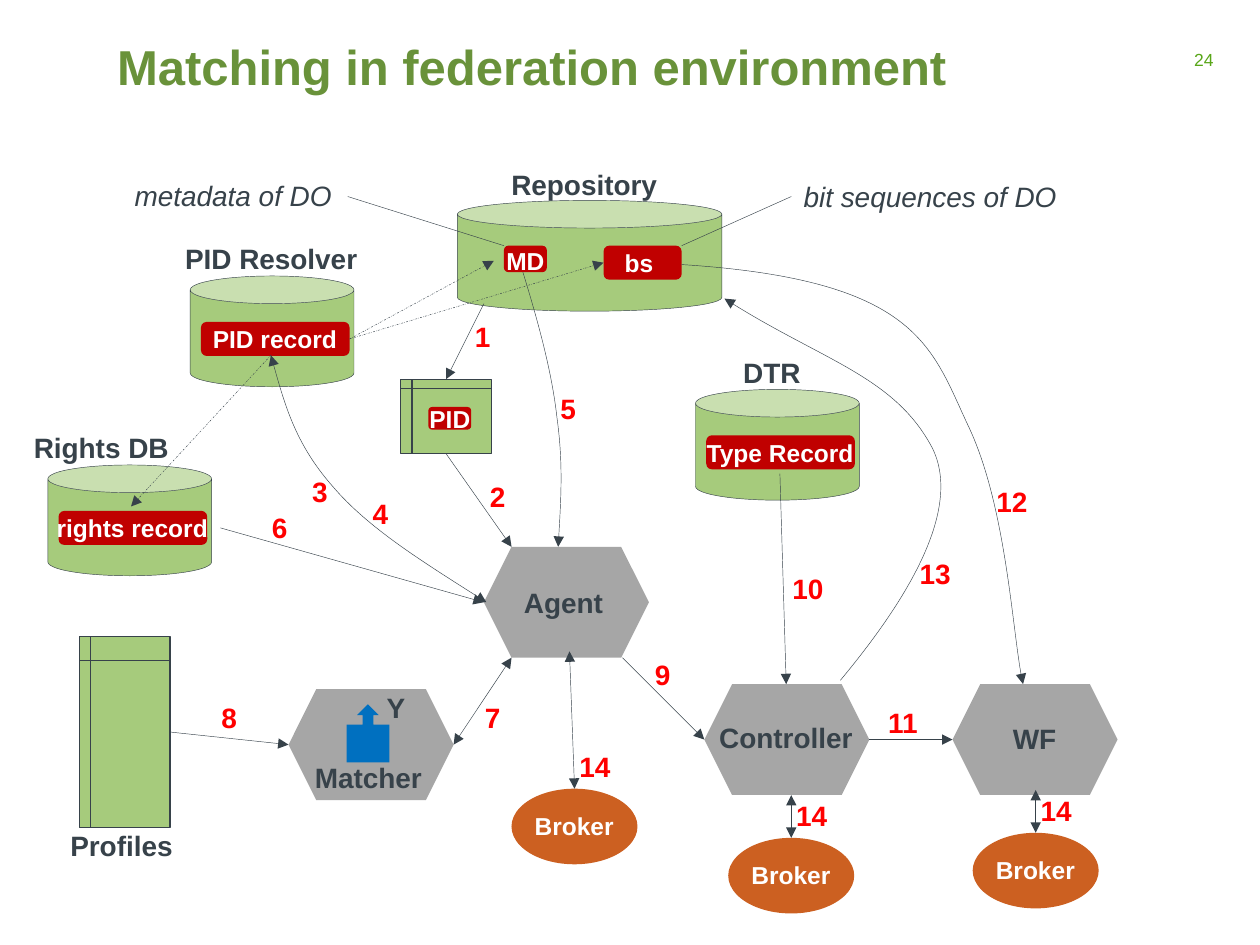
"""Build the slide on matching in a federation environment."""
import lxml.etree
import pptx
import pptx.dml.color
import pptx.enum.dml
import pptx.enum.shapes
import pptx.enum.text
import pptx.oxml.ns
import pptx.util

SHAPE = pptx.enum.shapes.MSO_SHAPE
ALIGN = pptx.enum.text.PP_ALIGN
COLORS = {"title": "69923A", "number": "58A618", "green": "A6CB7C", "dark": "37424A",
          "gray": "A6A6A6", "red": "C00000", "step": "FF0000", "blue": "0070C0",
          "orange": "CC6021", "white": "FFFFFF"}
GRID = 1000
CAN, PILL, HEXAGON, BROKER = (130, 88), (118, 27), (131, 88), (100, 60)

TITLE = "Matching in federation environment"
STORES = [("PID Resolver", 151, 219, 137, 159, "PID record", 119),
          ("DTR", 552, 309, 580, 66, "Type Record", 137),
          ("Rights DB", 38, 369, 17, 129, "rights record", 141)]
AGENTS = [("Agent", 384, 434, 406, 460, 84), ("Matcher", 229, 547, 240, 599, 106),
          ("Controller", 559, 543, 561, 567, 127), ("WF", 756, 543, 794, 568, 55)]
BROKERS = [(578, 665, (628, 631)), (406, 626, (452, 517)), (772, 661, (822, 627))]
SHEETS = [("PID sheet", 318, 301, 72, 59), ("Profiles", 63, 505, 72, 152)]
PILLS = [("MD", 400, 195, 34, 21), ("bs", 479, 195, 62, 27), ("PID", 340, 323, 34, 18)]
PILL_TEXTS = [("MD", 392, 190, 51), ("bs", 486, 192, 43), ("PID", 331, 316, 53)]
NAMES = [("Repository", 396, 128, 137), ("Profiles", 46, 653, 103), ("Y", 297, 543, 35)]
NOTES = [("bit sequences of DO", 628, 138, 224), ("metadata of DO", 97, 137, 179)]
STEPS = [("1", 367, 249), ("2", 379, 376), ("3", 238, 372), ("4", 286, 389), ("5", 435, 306),
         ("6", 206, 400), ("7", 375, 551), ("8", 166, 551), ("9", 510, 517), ("10", 619, 449),
         ("11", 695, 555), ("12", 781, 380), ("13", 720, 437)]
LINES = [((628, 156), (541, 195), ""), ((276, 156), (400, 195), "")]
ARROWS = [(("PID sheet", 2), (406, 434), "tail"), ((384, 241), ("PID sheet", 0), "tail"),
          (("Profiles", 3), (229, 591), "tail"), ((494, 522), (559, 587), "tail"),
          ((690, 587), (756, 587), "tail"), ((619, 376), (624, 543), "tail"),
          ((175, 419), (384, 478), "tail"), ((406, 522), (360, 591), "head tail")]
DASHED = [(("PID record", 3), (392, 207), "tail"), (("PID record", 3), ("bs", 1), "tail"),
          ((215, 282), (104, 402), "tail")]
CURVES = [([(415, 216), (427, 255), (438, 295), (442, 331),
            (447, 367), (445, 400), (443, 434)], "tail"),
          ([(215, 282), (225, 318), (235, 353), (264, 386),
            (292, 419), (339, 448), (386, 478)], "head tail"),
          ([(541, 210), (728, 222), (739, 275), (768, 337),
            (798, 399), (804, 509), (812, 543)], "tail"),
          ([(667, 540), (711, 487), (769, 405), (738, 352),
            (708, 299), (650, 285), (575, 237)], "tail")]

prs = pptx.Presentation()
prs.slide_width, prs.slide_height = pptx.util.Inches(10), pptx.util.Inches(7.5)
CELL = prs.slide_width // GRID
s = prs.slides.add_slide(prs.slide_layouts[5])
nodes = {}


def rgb(name):
    return pptx.dml.color.RGBColor.from_string(COLORS[name])


def grid(*values):
    return [pptx.util.Emu(round(v * CELL)) for v in values]


def style(p, size, color, bold=True, italic=False, align=ALIGN.LEFT):
    p.alignment = align
    f = p.font
    f.name, f.size, f.bold, f.italic = "Arial", pptx.util.Pt(size), bold, italic
    f.color.rgb = rgb(color)


def block(kind, x, y, w, h, fill, line=0):
    sp = s.shapes.add_shape(kind, *grid(x, y, w, h))
    sp.shadow.inherit = False
    sp.fill.solid()
    sp.fill.fore_color.rgb = rgb(fill)
    if line:
        sp.line.color.rgb, sp.line.width = rgb("dark"), pptx.util.Pt(line)
    else:
        sp.line.fill.background()
    return sp


def label(text, x, y, w, size=16, color="dark", **kw):
    tf = s.shapes.add_textbox(*grid(x, y, w, 37 if size == 16 else 34)).text_frame
    tf.word_wrap = False
    tf.auto_size = pptx.enum.text.MSO_AUTO_SIZE.SHAPE_TO_FIT_TEXT
    tf.text = text
    style(tf.paragraphs[0], size, color, **kw)


def stroke(sp, ends, dash=False):
    sp.line.color.rgb, sp.line.width = rgb("dark"), pptx.util.Pt(0.25)
    if dash:
        sp.line.dash_style = pptx.enum.dml.MSO_LINE.DASH_DOT
    ln = sp._element.spPr.find(pptx.oxml.ns.qn("a:ln"))
    for end in ends.split():
        lxml.etree.SubElement(ln, pptx.oxml.ns.qn(f"a:{end}End"), type="triangle")


def connect(start, end, ends, dash=False):
    points = [(0, 0) if isinstance(p[0], str) else p for p in (start, end)]
    c = s.shapes.add_connector(pptx.enum.shapes.MSO_CONNECTOR.STRAIGHT,
                               *grid(*points[0], *points[1]))
    for p, join in ((start, c.begin_connect), (end, c.end_connect)):
        if isinstance(p[0], str):
            join(nodes[p[0]], p[1])
    stroke(c, ends, dash)
    lxml.etree.SubElement(c._element.spPr, pptx.oxml.ns.qn("a:effectLst"))


def curve(points, ends):
    fb = s.shapes.build_freeform(*points[0], scale=CELL)
    fb.add_line_segments(points[1:], close=False)
    sp = fb.convert_to_shape()
    sp.shadow.inherit = False
    sp.fill.background()
    stroke(sp, ends)
    outline = sp._element.xpath(".//a:path")[0]
    for i, segment in enumerate(outline.findall(pptx.oxml.ns.qn("a:lnTo"))):
        if i % 3 == 0:
            bezier = lxml.etree.SubElement(outline, pptx.oxml.ns.qn("a:cubicBezTo"))
        bezier.append(segment[0])
        outline.remove(segment)


title = s.shapes.title
title.left, title.top, title.width, title.height = grid(83, 24, 827, 107)
title.text_frame.text = TITLE
title.text_frame.vertical_anchor = pptx.enum.text.MSO_ANCHOR.TOP
style(title.text_frame.paragraphs[0], 28, "title")

number = s.shapes.add_textbox(*grid(909, 36, 64, 22)).text_frame
number.word_wrap = True
number.vertical_anchor = pptx.enum.text.MSO_ANCHOR.MIDDLE
number.text = "24"
style(number.paragraphs[0], 10, "number", bold=False, align=ALIGN.RIGHT)

block(SHAPE.CAN, 363, 159, 210, 88, "green", 0.25)
for name, *box in SHEETS:
    nodes[name] = block(SHAPE.FLOWCHART_INTERNAL_STORAGE, *box, "green", 0.75)
for name, *box in PILLS:
    nodes[name] = block(SHAPE.ROUNDED_RECTANGLE, *box, "red")
for name, x, y, name_x, name_w, record, record_w in STORES:
    block(SHAPE.CAN, x, y, *CAN, "green", 0.25)
    label(name, name_x, y - 32, name_w)
    nodes[record] = block(SHAPE.ROUNDED_RECTANGLE, x + 8.5, y + 36.5, *PILL, "red")
    label(record, x + 8.5 + (PILL[0] - record_w) / 2, y + 33.5, record_w, 14, "white")
for name, x, y, *place in AGENTS:
    block(SHAPE.HEXAGON, x, y, *HEXAGON, "gray")
    label(name, *place)
block(SHAPE.LEFT_ARROW_CALLOUT, 269, 565, 46, 34, "blue").rotation = 90

for text, *place in PILL_TEXTS:
    label(text, *place, 14, "white")
for text, *place in NAMES:
    label(text, *place)
for text, *place in NOTES:
    label(text, *place, bold=False, italic=True)
for text, x, y in STEPS:
    label(text, x, y, 33 if len(text) == 1 else 45, color="step")

for route in LINES + ARROWS:
    connect(*route)
for route in DASHED:
    connect(*route, dash=True)
for route in CURVES:
    curve(*route)
for i, (x, y, target) in enumerate(BROKERS):
    nodes[i, "broker"] = block(SHAPE.OVAL, x, y, *BROKER, "orange")
    label("Broker", x + 8.5, y + 13, 83, 14, "white")
    connect((x + BROKER[0] / 2, y), target, "head tail")
    label("14", x + 44, y - 36, 45, color="step")

prs.save("out.pptx")
